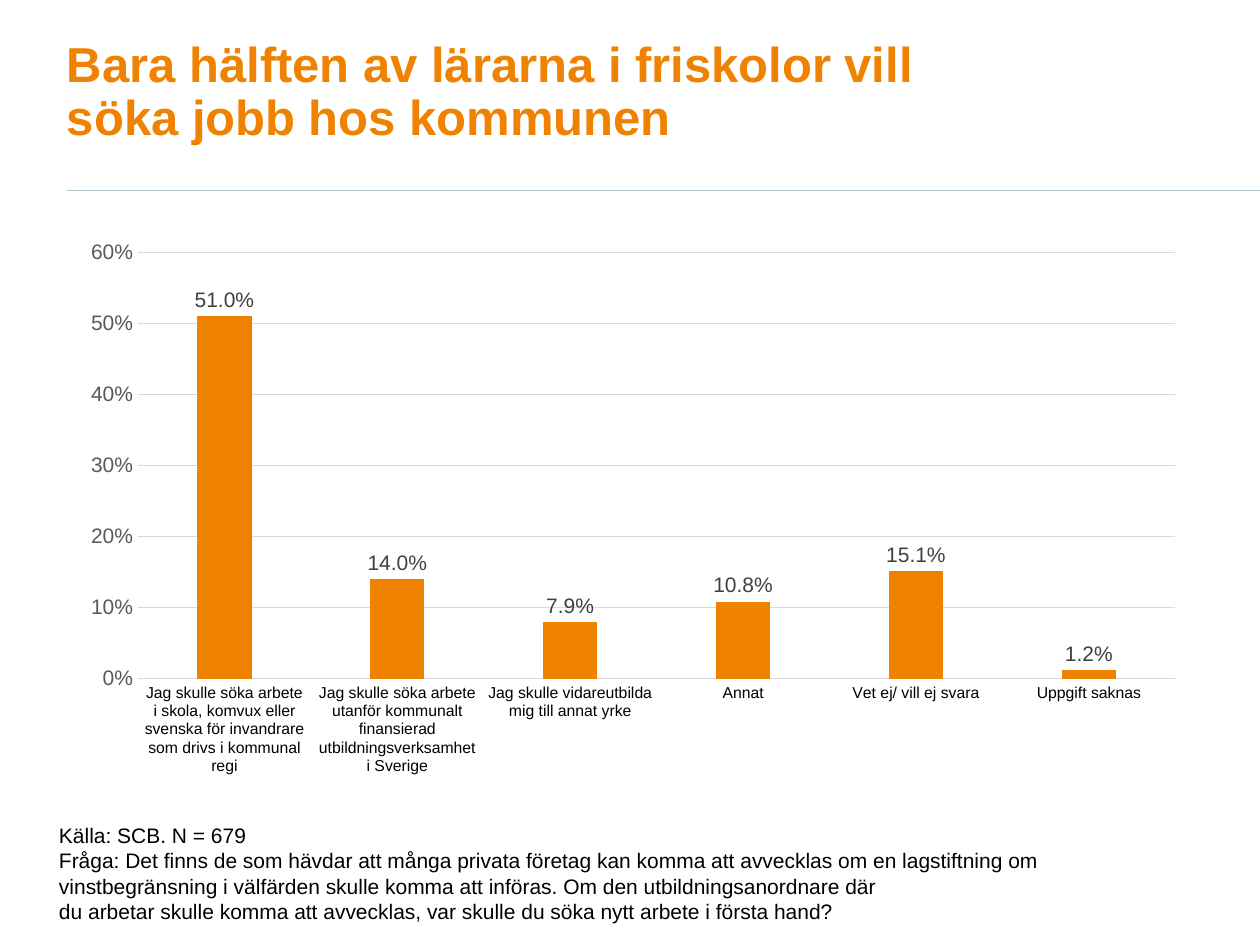
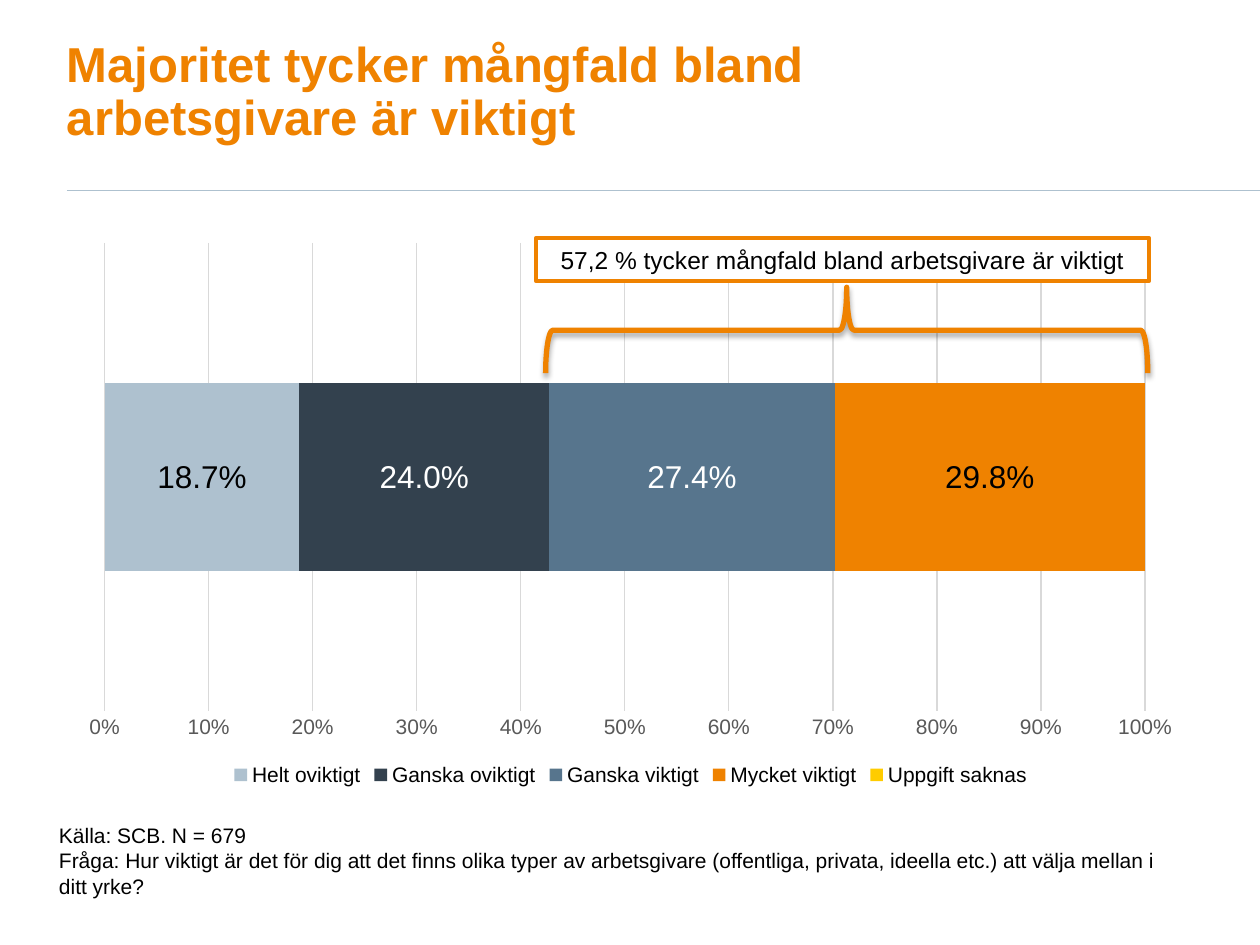
from lxml import etree
from pptx import Presentation
from pptx.chart.data import CategoryChartData
from pptx.dml.color import RGBColor
from pptx.enum.chart import XL_CHART_TYPE as ChartType
from pptx.enum.chart import XL_LABEL_POSITION as LabelPosition
from pptx.enum.chart import XL_LEGEND_POSITION as LegendPosition
from pptx.enum.chart import XL_TICK_MARK as TickMark
from pptx.enum.shapes import MSO_CONNECTOR as Connector
from pptx.enum.shapes import MSO_SHAPE as Shape
from pptx.enum.text import MSO_ANCHOR as Anchor
from pptx.enum.text import MSO_AUTO_SIZE as AutoSize
from pptx.enum.text import PP_ALIGN as Align
from pptx.oxml import parse_xml
from pptx.oxml.ns import nsdecls, qn
from pptx.util import Cm, Pt

# Content
SOURCE = "Källa: SCB. N = 679"

JOBS = {
    "title": "Bara hälften av lärarna i friskolor vill söka jobb hos kommunen",
    "answers": [
        ("Jag skulle söka arbete i skola, komvux eller svenska för invandrare "
         "som drivs i kommunal regi", 0.51),
        ("Jag skulle söka arbete utanför kommunalt finansierad "
         "utbildningsverksamhet i Sverige", 0.14),
        ("Jag skulle vidareutbilda mig till annat yrke", 0.079),
        ("Annat", 0.108),
        ("Vet ej/ vill ej svara", 0.151),
        ("Uppgift saknas", 0.012),
    ],
    "notes": [
        SOURCE,
        "Fråga: Det finns de som hävdar att många privata företag kan komma "
        "att avvecklas om en lagstiftning om vinstbegränsning i välfärden "
        "skulle komma att införas. Om den utbildningsanordnare där",
        "du arbetar skulle komma att avvecklas, var skulle du söka nytt "
        "arbete i första hand?",
    ],
}

DIVERSITY = {
    "title": "Majoritet tycker mångfald bland arbetsgivare är viktigt",
    # answer, share, bar colour, label colour (None: no label)
    "answers": [
        ("Helt oviktigt", 0.187, "mist", "black"),
        ("Ganska oviktigt", 0.24, "navy", "white"),
        ("Ganska viktigt", 0.274, "steel", "white"),
        ("Mycket viktigt", 0.298, "orange", "black"),
        ("Uppgift saknas", 0, "yellow", None),
    ],
    "callout": "57,2 % tycker mångfald bland arbetsgivare är viktigt",
    "notes": [
        SOURCE,
        "Fråga: Hur viktigt är det för dig att det finns olika typer av "
        "arbetsgivare (offentliga, privata, ideella etc.) att välja mellan i "
        "ditt yrke?",
    ],
}

# Shared look
COLORS = {
    "orange": "EF8200", "mist": "AEC1CF", "navy": "33414E", "steel": "57758D",
    "yellow": "FFCC00", "black": "000000", "white": "FFFFFF",
    "grid": "D9D9D9", "axis": "595959", "label": "404040",
}
FONT = "Arial"
SHARE_FORMAT = "###0.0%"
WIDTH, HEIGHT = Cm(25.4), Cm(19.05)
LEFT = Cm(1.35)
RULE_Y = Cm(3.84)
CHART_BOX = LEFT, Cm(4.67), Cm(22.73), Cm(11.28)
NOTE_BOX = Cm(0.94), Cm(16.46), Cm(23.14), Cm(2.5)


def rgb(name):
    return RGBColor.from_string(COLORS[name])


def set_font(font, size, color="black", bold=False):
    font.name, font.size, font.bold = FONT, Pt(size), bold
    font.color.rgb = rgb(color)


def set_line(line, color, width):
    line.color.rgb = rgb(color)
    line.width = Pt(width)


def write(frame, *texts, size=12, color="black", bold=False,
          align=Align.LEFT, anchor=Anchor.TOP, spacing=1.0):
    frame.word_wrap = True
    frame.auto_size = AutoSize.NONE
    frame.vertical_anchor = anchor
    for number, text in enumerate(texts):
        paragraph = frame.add_paragraph() if number else frame.paragraphs[0]
        paragraph.alignment = align
        paragraph.line_spacing = spacing
        run = paragraph.add_run()
        run.text = text
        set_font(run.font, size, color, bold)


def prepare_layout(layout):
    """Place the title of the layout."""
    title = layout.placeholders[0]
    title.left, title.top = LEFT, Cm(0.79)
    title.width, title.height = Cm(18.19), Cm(2.29)


def add_rule(slide):
    """Draw the line under the title on the slide's layout."""
    rule = slide.shapes.add_connector(
        Connector.STRAIGHT, LEFT, RULE_Y, WIDTH, RULE_Y)
    set_line(rule.line, "mist", 1)
    etree.SubElement(rule.element.spPr, qn("a:effectLst"))
    slide.slide_layout.shapes.element.append(rule.element)


def add_page(deck, layout, content):
    slide = deck.slides.add_slide(layout)
    frame = slide.shapes.title.text_frame
    frame.margin_left = frame.margin_top = 0
    frame.margin_right, frame.margin_bottom = Cm(0.25), Cm(0.13)
    write(frame, content["title"], size=28, color="orange", bold=True,
          anchor=Anchor.BOTTOM, spacing=0.9)
    return slide


def add_notes(slide, content):
    write(slide.shapes.add_textbox(*NOTE_BOX).text_frame, *content["notes"])


def add_share_chart(slide, kind, categories, series, gap, overlap):
    data = CategoryChartData(number_format=SHARE_FORMAT)
    data.categories = categories
    for name, values in series:
        data.add_series(name, values)
    chart = slide.shapes.add_chart(kind, *CHART_BOX, data).chart
    chart.has_title = chart.has_legend = False
    set_font(chart.font, 10)

    plot = chart.plots[0]
    plot.vary_by_categories = False
    plot.gap_width, plot.overlap = gap, overlap

    shares = chart.value_axis
    shares.major_tick_mark = shares.minor_tick_mark = TickMark.NONE
    shares.tick_labels.number_format = "0%"
    shares.tick_labels.number_format_is_linked = False
    set_font(shares.tick_labels.font, 12, "axis")
    shares.format.line.fill.background()
    shares.has_major_gridlines = True
    set_line(shares.major_gridlines.format.line, "grid", 0.75)
    return chart


def paint_series(series, color, label_color, label_size, position):
    series.format.fill.solid()
    series.format.fill.fore_color.rgb = rgb(color)
    if label_color:
        labels = series.data_labels
        labels.show_value = True
        labels.number_format = SHARE_FORMAT
        labels.number_format_is_linked = False
        labels.position = position
        set_font(labels.font, label_size, label_color)


def fix_plot_area(chart, **fractions):
    """Set the inner plot area as fractions x, y, w, h of the chart."""
    area = chart.element.find(".//" + qn("c:plotArea"))
    for old in area.findall(qn("c:layout")):
        area.remove(old)
    modes = '<c:xMode val="edge"/><c:yMode val="edge"/>'
    sizes = "".join(f'<c:{k} val="{v}"/>' for k, v in fractions.items())
    area.insert(0, parse_xml(
        f'<c:layout {nsdecls("c")}><c:manualLayout>'
        f'<c:layoutTarget val="inner"/>{modes}{sizes}'
        '</c:manualLayout></c:layout>'))


def build_jobs(slide):
    answers, values = zip(*JOBS["answers"])
    chart = add_share_chart(slide, ChartType.COLUMN_CLUSTERED, answers,
                            [("Series 1", values)], 219, -27)
    fix_plot_area(chart, x=0.063, y=0.037, w=0.92, h=0.762)
    chart.value_axis.minimum_scale = 0
    chart.value_axis.maximum_scale = 0.6
    chart.value_axis.major_unit = 0.1
    axis = chart.category_axis
    axis.major_tick_mark = axis.minor_tick_mark = TickMark.NONE
    set_font(axis.tick_labels.font, 9)
    set_line(axis.format.line, "grid", 0.75)
    paint_series(chart.plots[0].series[0], "orange", "label", 12,
                 LabelPosition.OUTSIDE_END)
    add_notes(slide, JOBS)


def add_brace(slide, left, top, width, height):
    """Add a brace that opens downwards over the given area."""
    shift = (width - height) // 2
    brace = slide.shapes.add_shape(
        Shape.RIGHT_BRACE, left + shift, top - shift, height, width)
    brace.rotation = 270
    brace.fill.background()
    set_line(brace.line, "orange", 3)
    brace.element.spPr.append(parse_xml(
        f'<a:effectLst {nsdecls("a")}>'
        f'<a:outerShdw blurRad="{Pt(3.1)}" dist="{Pt(1.8)}" dir="5400000" '
        'rotWithShape="0">'
        f'<a:srgbClr val="{COLORS["black"]}"><a:alpha val="35000"/></a:srgbClr>'
        '</a:outerShdw></a:effectLst>'))


def build_diversity(slide):
    answers = DIVERSITY["answers"]
    chart = add_share_chart(
        slide, ChartType.BAR_STACKED_100, ["1"],
        [(name, [share]) for name, share, *_ in answers], 150, 100)
    chart.category_axis.visible = False
    chart.has_legend = True
    chart.legend.position = LegendPosition.BOTTOM
    chart.legend.include_in_layout = False
    set_font(chart.legend.font, 12)
    for series, (_, _, color, label_color) in zip(chart.plots[0].series, answers):
        paint_series(series, color, label_color, 18, LabelPosition.CENTER)

    # Brace and callout over the two "viktigt" parts
    add_brace(slide, Cm(11), Cm(5.79), Cm(12.14), Cm(1.73))
    callout = slide.shapes.add_shape(
        Shape.RECTANGLE, Cm(10.8), Cm(4.8), Cm(12.37), Cm(0.86))
    callout.shadow.inherit = False
    callout.fill.solid()
    callout.fill.fore_color.rgb = rgb("white")
    set_line(callout.line, "orange", 2.25)
    write(callout.text_frame, DIVERSITY["callout"], size=14,
          align=Align.CENTER, anchor=Anchor.MIDDLE)
    add_notes(slide, DIVERSITY)


def main():
    deck = Presentation()
    deck.slide_width, deck.slide_height = WIDTH, HEIGHT
    layout = deck.slide_layouts.get_by_name("Title Only")
    prepare_layout(layout)

    jobs = add_page(deck, layout, JOBS)
    add_rule(jobs)
    build_jobs(jobs)
    build_diversity(add_page(deck, layout, DIVERSITY))
    deck.save("out.pptx")


if __name__ == "__main__":
    main()
